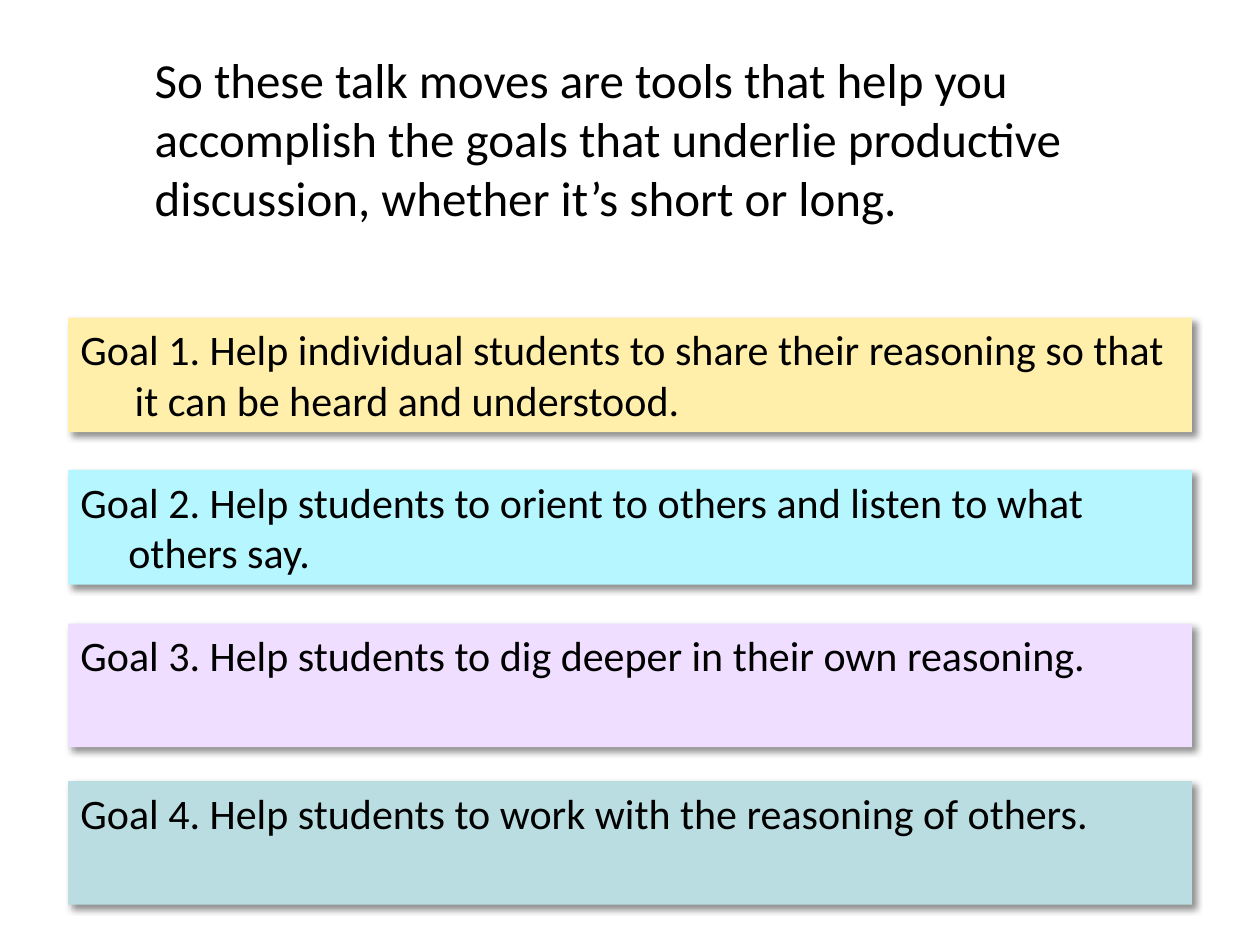
from dataclasses import dataclass

from lxml.etree import SubElement
from pptx import Presentation
from pptx.dml.color import RGBColor
from pptx.enum.shapes import MSO_SHAPE
from pptx.enum.text import MSO_ANCHOR, PP_ALIGN
from pptx.oxml.ns import qn
from pptx.util import Emu, Pt

EMU_PER_PX = 9144
COLORS = {
    "text": "000000",
    "shadow": "000000",
    "yellow": "FFEFAA",
    "cyan": "B6F6FF",
    "lilac": "EFDEFF",
    "teal": "BADDE1",
}
FONT = "Calibri"
GOAL_LEFT, GOAL_WIDTH = 54, 892


@dataclass
class Goal:
    text: str
    color: str
    top: int
    height: int
    hanging: int


GOALS = [
    Goal("Goal 1. Help individual students to share their reasoning so that "
         "it can be heard and understood.", "yellow", 252, 91, 43),
    Goal("Goal 2. Help students to orient to others and listen to what "
         "others say.", "cyan", 373, 91, 38),
    Goal("Goal 3. Help students to dig deeper in their own reasoning.",
         "lilac", 495, 98, 32),
    Goal("Goal 4. Help students to work with the reasoning of others.",
         "teal", 620, 98, 43),
]


def px(length: int) -> Emu:
    return Emu(length * EMU_PER_PX)


def rgb(name: str) -> RGBColor:
    return RGBColor.from_string(COLORS[name])


def write_text(shape, text: str, size: int, anchor):
    frame = shape.text_frame
    frame.word_wrap = True
    frame.vertical_anchor = anchor
    paragraph = frame.paragraphs[0]
    paragraph.text = text
    paragraph.alignment = PP_ALIGN.LEFT
    paragraph.font.name = FONT
    paragraph.font.size = Pt(size)
    paragraph.font.color.rgb = rgb("text")
    return paragraph


def add_drop_shadow(shape) -> None:
    shape.shadow.inherit = False
    effects = shape._element.spPr.find(qn("a:effectLst"))
    shadow = SubElement(effects, qn("a:outerShdw"), blurRad=str(Pt(4)),
                        dist=str(Pt(3)), dir=str(45 * 60000),
                        algn="tl", rotWithShape="0")
    color = SubElement(shadow, qn("a:srgbClr"), val=COLORS["shadow"])
    SubElement(color, qn("a:alpha"), val="43000")


def add_goal(slide, goal: Goal) -> None:
    shape = slide.shapes.add_shape(
        MSO_SHAPE.RECTANGLE, px(GOAL_LEFT), px(goal.top),
        px(GOAL_WIDTH), px(goal.height))
    shape.fill.solid()
    shape.fill.fore_color.rgb = rgb(goal.color)
    shape.line.fill.background()
    add_drop_shadow(shape)
    paragraph = write_text(shape, goal.text, 24, MSO_ANCHOR.TOP)
    properties = paragraph._p.get_or_add_pPr()
    properties.set("marL", str(px(goal.hanging)))
    properties.set("indent", str(-px(goal.hanging)))


def add_heading(slide) -> None:
    heading = slide.shapes.add_textbox(px(113), px(34), px(790), px(151))
    write_text(heading, "So these talk moves are tools that help you accomplish "
               "the goals that underlie productive discussion, whether it’s "
               "short or long.", 28, MSO_ANCHOR.MIDDLE)


def main() -> None:
    presentation = Presentation()
    presentation.slide_width = px(1000)
    presentation.slide_height = px(750)
    slide = presentation.slides.add_slide(presentation.slide_layouts[6])
    for goal in GOALS:
        add_goal(slide, goal)
    add_heading(slide)
    presentation.save("out.pptx")


if __name__ == "__main__":
    main()
